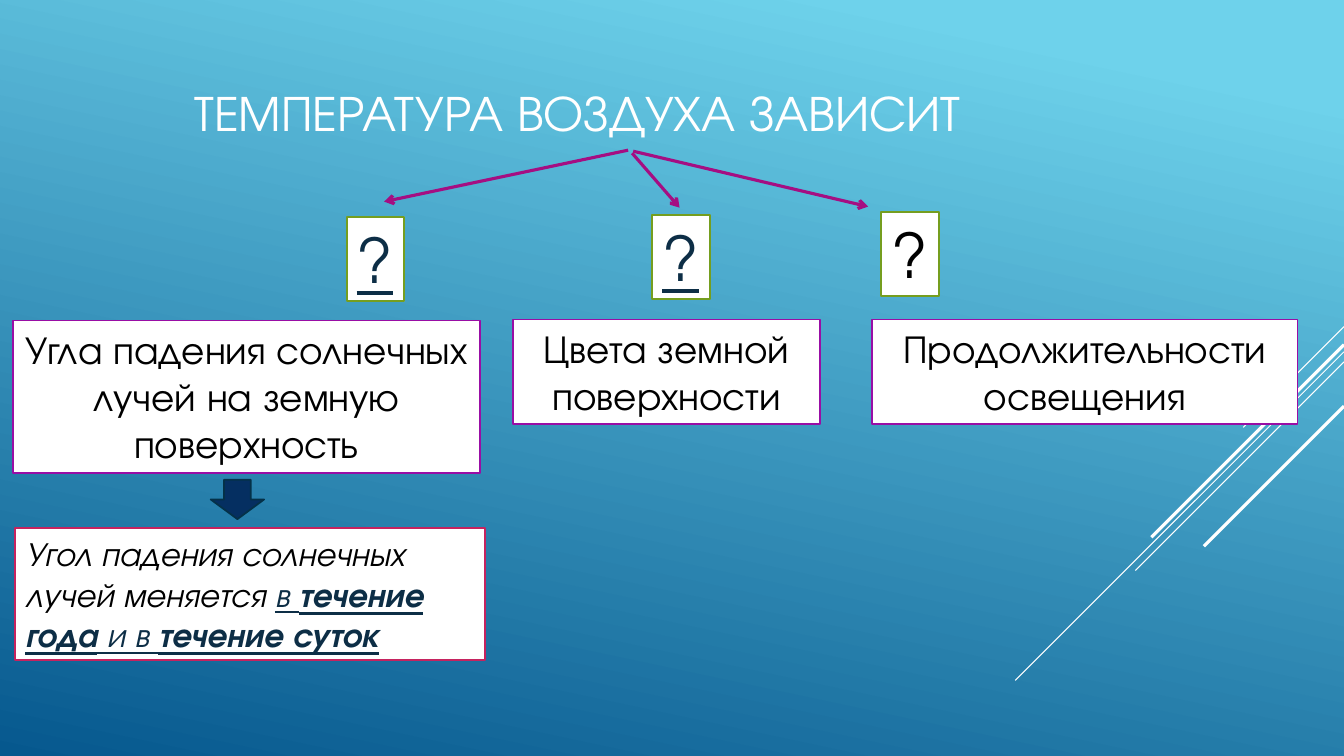
"""Build the slide on what the air temperature depends on."""
from lxml.etree import SubElement
from pptx import Presentation
from pptx.dml.color import RGBColor
from pptx.enum.shapes import MSO_CONNECTOR as Connector, MSO_SHAPE as Shape
from pptx.enum.text import MSO_ANCHOR as Anchor, MSO_AUTO_SIZE as AutoSize, PP_ALIGN as Align
from pptx.oxml.ns import qn
from pptx.util import Inches, Pt

WHITE, BLACK, NAVY = "FFFFFF", "000000", "0D2E46"
GREEN, PURPLE, CRIMSON, MAGENTA = "759E1F", "990EA5", "C6235F", "A50E82"


def color(value):
    return RGBColor.from_string(value)


def add_text(para, text, size=28, ink=BLACK, font="TeX Gyre Adventor", **marks):
    span = para.add_run()
    span.text = text
    span.font.name = font
    span.font.size = Pt(size)
    span.font.color.rgb = color(ink)
    for mark, value in marks.items():
        setattr(span.font, mark, value)


class SlideBuilder:
    def __init__(self, deck):
        self.page = deck.slides.add_slide(deck.slide_layouts[6])
        self.outline = Pt(1.25)

    def background(self, stops, angle):
        fill = self.page.background.fill
        fill.gradient()
        fill.gradient_angle = angle
        for stop, (position, value) in zip(fill.gradient_stops, stops):
            stop.position = position
            stop.color.rgb = color(value)

    def line(self, start, end, ink=WHITE, width=0.75, arrow=False):
        points = [Inches(value) for value in (*start, *end)]
        connector = self.page.shapes.add_connector(Connector.STRAIGHT, *points)
        connector.line.color.rgb = color(ink)
        connector.line.width = Pt(width)
        if arrow:
            SubElement(connector.line._get_or_add_ln(), qn("a:tailEnd"), type="arrow")
        SubElement(connector._element.spPr, qn("a:effectLst"))

    def shape(self, kind, place, fill, border):
        shape = self.page.shapes.add_shape(kind, *map(Inches, place))
        shape.shadow.inherit = False
        shape.fill.solid()
        shape.fill.fore_color.rgb = color(fill)
        shape.line.color.rgb = color(border)
        shape.line.width = self.outline
        return shape

    def box(self, place, border, spans, align=Align.LEFT, wrap=True):
        frame = self.shape(Shape.RECTANGLE, place, WHITE, border).text_frame
        frame.word_wrap = wrap
        frame.auto_size = AutoSize.SHAPE_TO_FIT_TEXT
        frame.vertical_anchor = Anchor.TOP
        para = frame.paragraphs[0]
        para.alignment = align
        for text, style in spans:
            add_text(para, text, **style)

    def title(self, place, text):
        frame = self.page.shapes.add_textbox(*map(Inches, place)).text_frame
        frame.word_wrap = True
        frame.vertical_anchor = Anchor.MIDDLE
        add_text(frame.paragraphs[0], text, size=36, ink=WHITE)


def main():
    deck = Presentation()
    deck.slide_width, deck.slide_height = Inches(13.33), Inches(7.5)
    slide = SlideBuilder(deck)
    slide.background([(0.1, "6ED2EB"), (1, "06588E")], angle=258)

    right = 13.33
    for top, run, width in [(3.24, 1, 0.75), (3.49, 3.26, 0.75), (3.59, 2.07, 0.75),
                            (3.42, 1.91, 2.25), (4.03, 1.39, 2.25)]:
        slide.line((right, top), (right - run, top + run), width=width)

    slide.title((1.83, 0.28, 9.33, 1.65), "ТЕМПЕРАТУРА ВОЗДУХА ЗАВИСИТ")

    linked = {"ink": NAVY, "underline": True}
    for left, top, style in [(3.44, 2.15, linked), (6.47, 2.13, linked), (8.74, 2.1, {})]:
        slide.box((left, top, 0.57, 0.84), GREEN, [("?", {"size": 44, **style})], wrap=False)

    for start, end in [((6.23, 1.49), (3.81, 2)), ((6.28, 1.5), (8.61, 2.05)),
                       ((6.27, 1.52), (6.74, 2.06))]:
        slide.line(start, end, MAGENTA, 2.25, arrow=True)

    for place, factor in [
        ((0.13, 3.18, 4.63, 1.51), "Угла падения солнечных лучей на земную поверхность"),
        ((5.09, 3.17, 3.04, 1.04), "Цвета земной поверхности"),
        ((8.65, 3.17, 4.22, 1.04), "Продолжительности освещения"),
    ]:
        slide.box(place, PURPLE, [(factor, {})], align=Align.CENTER)

    plain = {"size": 24, "italic": True}
    light = {**plain, **linked}
    strong = {**light, "bold": True}
    slide.box((0.15, 5.24, 4.66, 1.31), CRIMSON, [
        ("Угол падения солнечных лучей меняется ", plain), ("в ", light),
        ("течение", strong), (" ", light), ("года", strong),
        (" и в ", light), ("течение суток", strong),
    ])
    slide.shape(Shape.DOWN_ARROW, (2.09, 4.76, 0.53, 0.39), "052F61", "043148")
    deck.save("out.pptx")


if __name__ == "__main__":
    main()
